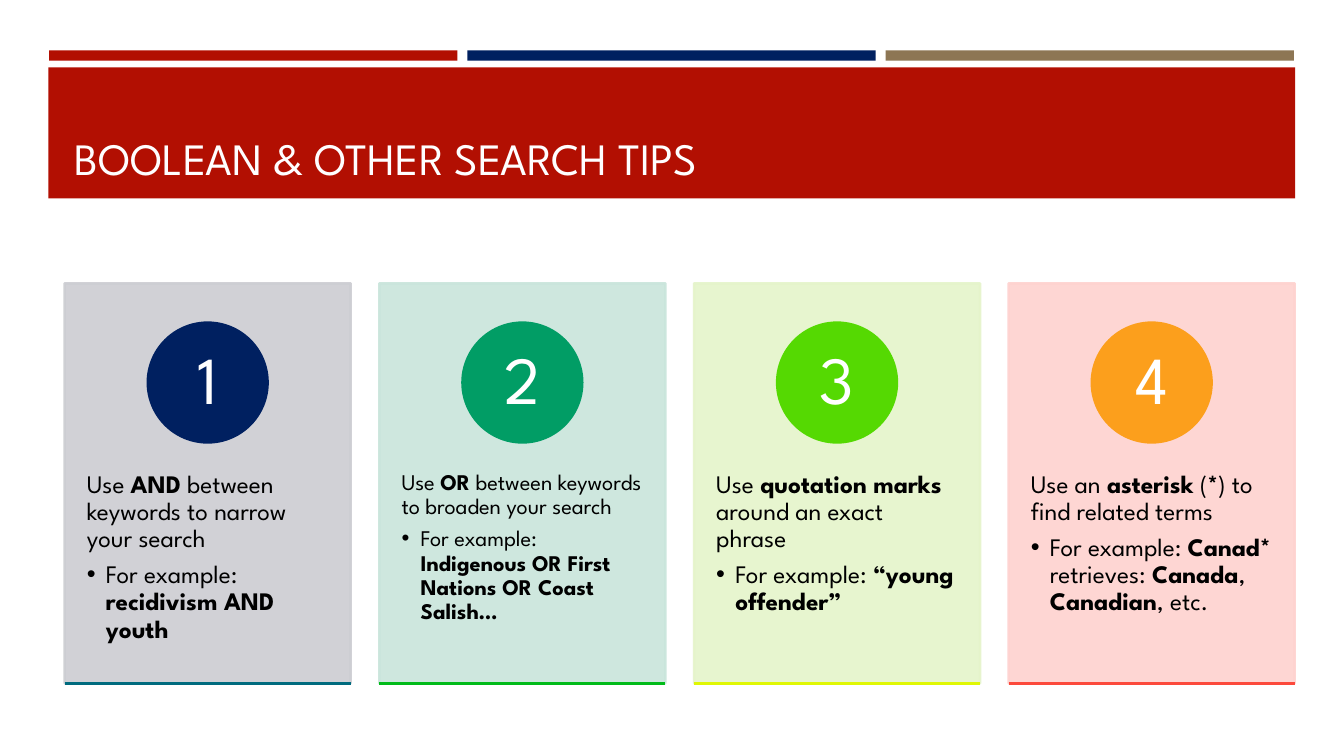
"""Build the slide of Boolean and other search tips."""
from lxml import etree
from pptx import Presentation
from pptx import util as u
from pptx.dml.color import RGBColor
from pptx.enum import shapes, text
from pptx.oxml.ns import qn

FONT = "League Spartan"
TITLE = "BOOLEAN & OTHER SEARCH TIPS"
COLORS = {"red": "B20F02", "navy": "002060", "tan": "8D7654",
          "title": "FFFEFF", "white": "FFFFFF", "black": "000000"}
BARS = ["red", "navy", "tan"]

# "|" switches bold on and off
CARDS = [
    {"tip": "Use |AND| between keywords to narrow your search",
     "example": "For example: |recidivism AND youth", "size": 18,
     "card": "CCCDD2", "circle": "002060", "rule": "006B7E"},
    {"tip": "Use |OR| between keywords to broaden your search",
     "example": "For example: |Indigenous OR First Nations OR Coast Salish…", "size": 16,
     "card": "C9E5DB", "circle": "019D65", "rule": "01BB19"},
    {"tip": "Use |quotation marks |around an exact phrase",
     "example": "For example: |“young offender”", "size": 18,
     "card": "E5F4CA", "circle": "55D902", "rule": "DFF703"},
    {"tip": "Use an |asterisk| (|*|) to find related terms",
     "example": "For example: |Canad* |retrieves: |Canada|, |Canadian|, etc.", "size": 18,
     "card": "FED2CF", "circle": "FC9F1C", "rule": "FC493B"},
]

BAR = {"left": 1.24, "top": 1.27, "width": 10.29, "height": 0.26, "pitch": 10.54}
BANNER = (1.22, 1.7, 31.42, 3.3)
TITLE_BOX = (1.63, 1.96, 30.63, 2.82)
CARD = {"left": 1.63, "top": 7.14, "width": 7.21, "height": 10.08, "pitch": 7.93}
CIRCLE = {"top": 8.13, "size": 3.02}
TIP = {"top": 10.97, "height": 6.05, "side": 0.56, "end": 0.91, "indent": 0.48}


def apply(obj, formats):
    for name, value in formats.items():
        setattr(obj, name, value)


def cm(*values):
    return [u.Cm(v) for v in values]


def add_block(s, kind, box, color, alpha=None, outline=True):
    sp = s.shapes.add_shape(kind, *cm(*box))
    sp.shadow.inherit = False
    sp.fill.solid()
    sp.fill.fore_color.rgb = RGBColor.from_string(color)
    if outline:
        sp.line.width = u.Pt(1.75)
        sp.line.color.rgb = RGBColor.from_string(color)
    else:
        sp.line.fill.background()
    if alpha:
        for clr in sp._element.spPr.iter(qn("a:srgbClr")):
            etree.SubElement(clr, qn("a:alpha"), val=str(alpha * 1000))
    return sp


def add_runs(p, marked, size, color):
    for i, part in enumerate(marked.split("|")):
        r = p.add_run()
        r.text = part
        apply(r.font, {"name": FONT, "size": u.Pt(size), "bold": i % 2 == 1})
        r.font.color.rgb = RGBColor.from_string(COLORS[color])


def add_bullet(p, indent):
    pPr = p._p.get_or_add_pPr()
    pPr.set("marL", str(u.Cm(indent)))
    pPr.set("indent", str(-u.Cm(indent)))
    etree.SubElement(pPr, qn("a:buFont"), typeface="Arial")
    etree.SubElement(pPr, qn("a:buChar"), char="•")


def add_rule(s, left, top, width, color):
    line = s.shapes.add_connector(shapes.MSO_CONNECTOR.STRAIGHT,
                                  *cm(left, top, left + width, top))
    line.line.width = u.Pt(1.75)
    line.line.color.rgb = RGBColor.from_string(color)
    etree.SubElement(line._element.spPr, qn("a:effectLst"))


def add_header(s):
    rect = shapes.MSO_SHAPE.RECTANGLE
    for i, color in enumerate(BARS):
        box = (BAR["left"] + i * BAR["pitch"], BAR["top"], BAR["width"], BAR["height"])
        add_block(s, rect, box, COLORS[color], outline=False)
    add_block(s, rect, BANNER, COLORS["red"], outline=False)
    title = s.shapes.title
    apply(title, dict(zip(("left", "top", "width", "height"), cm(*TITLE_BOX))))
    tf = title.text_frame
    apply(tf, {"word_wrap": True, "auto_size": text.MSO_AUTO_SIZE.NONE,
               "vertical_anchor": text.MSO_ANCHOR.BOTTOM})
    p = tf.paragraphs[0]
    p.alignment = text.PP_ALIGN.LEFT
    add_runs(p, TITLE, 32, "title")
    s.shapes._spTree.append(title._element)


def add_card(s, i, card):
    left, width = CARD["left"] + i * CARD["pitch"], CARD["width"]
    add_block(s, shapes.MSO_SHAPE.RECTANGLE,
              (left, CARD["top"], width, CARD["height"]), card["card"], alpha=90)

    tf = s.shapes.add_textbox(*cm(left, TIP["top"], width, TIP["height"])).text_frame
    side, end = cm(TIP["side"], TIP["end"])
    apply(tf, {"word_wrap": True, "margin_left": side, "margin_right": side,
               "margin_top": end, "margin_bottom": end})
    tip, example = tf.paragraphs[0], tf.add_paragraph()
    for p, key, after in ((tip, "tip", 0.35), (example, "example", 0.15)):
        apply(p, {"line_spacing": 0.9, "space_after": u.Pt(round(after * card["size"], 1))})
        add_runs(p, card[key], card["size"], "black")
    example.level = 1
    add_bullet(example, TIP["indent"])

    size = CIRCLE["size"]
    circle = add_block(s, shapes.MSO_SHAPE.OVAL,
                       (left + (width - size) / 2, CIRCLE["top"], size, size), card["circle"])
    tf = circle.text_frame
    apply(tf, {"vertical_anchor": text.MSO_ANCHOR.MIDDLE,
               "margin_top": u.Cm(0.03), "margin_bottom": u.Cm(0.03)})
    p = tf.paragraphs[0]
    apply(p, {"alignment": text.PP_ALIGN.CENTER, "line_spacing": 0.9})
    add_runs(p, str(i + 1), 48, "white")

    add_rule(s, left, CARD["top"] + CARD["height"], width, card["rule"])


def main():
    prs = Presentation()
    apply(prs, {"slide_width": u.Cm(33.87), "slide_height": u.Cm(19.05)})
    s = prs.slides.add_slide(prs.slide_layouts[5])
    add_header(s)
    for i, card in enumerate(CARDS):
        add_card(s, i, card)
    prs.save("out.pptx")


if __name__ == "__main__":
    main()
